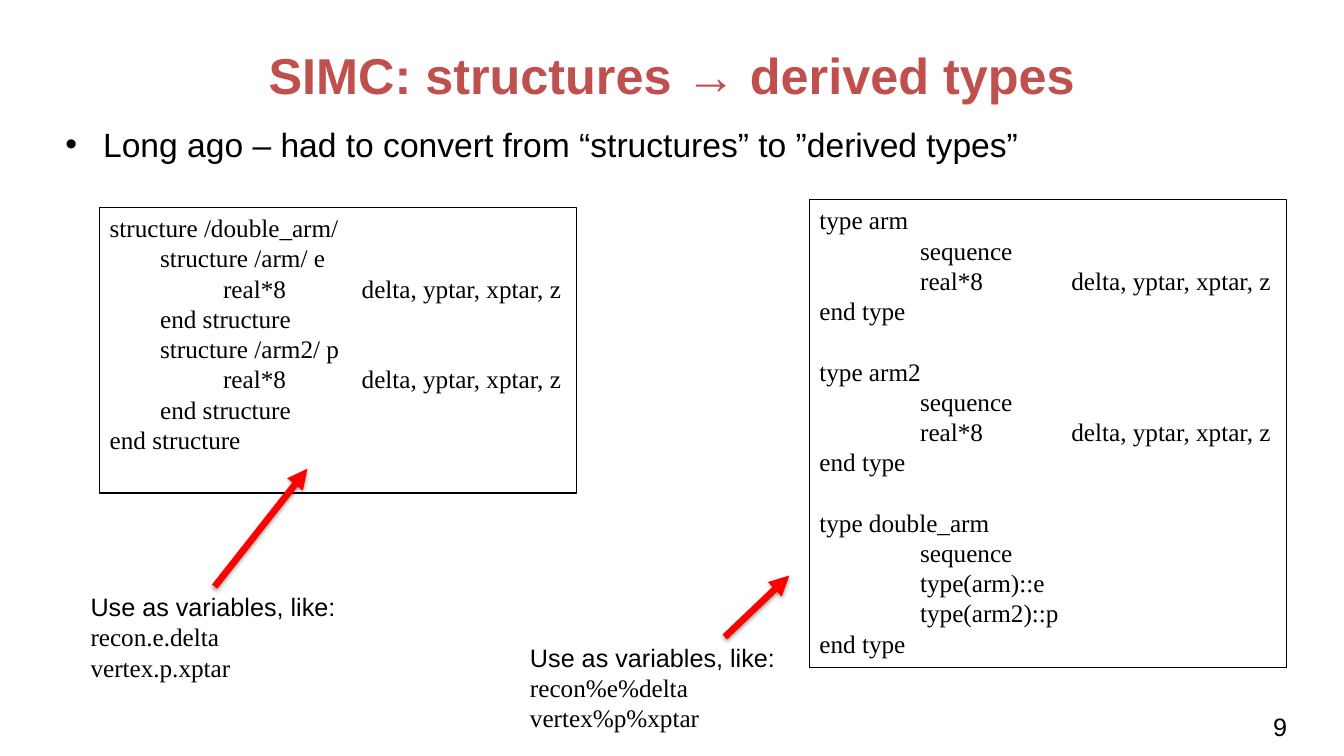
import pptx
import pptx.dml.color
import pptx.enum.shapes
import pptx.enum.text
import pptx.oxml
import pptx.oxml.ns
import pptx.util
from dataclasses import dataclass

Pt = pptx.util.Pt
ALIGN = pptx.enum.text.PP_ALIGN
ANCHOR = pptx.enum.text.MSO_ANCHOR
NAMESPACE = pptx.oxml.ns.nsdecls("a")


@dataclass(frozen=True)
class Theme:
    ink: str = "000000"
    accent: str = "C0504D"
    arrow: str = "FF0000"
    sans: str = "Arial"
    code: str = "Times New Roman"
    title_size: float = 36
    bullet_size: float = 24
    text_size: float = 18
    leading: float = 1.2
    arrow_width: float = 4.75


class SlideBuilder:
    """Holds the theme and the current slide; all lengths are in points."""

    def __init__(self, slide, theme):
        self.slide = slide
        self.theme = theme

    def style_run(self, run, size, family, color, bold=False):
        formats = {"size": Pt(size), "name": family, "bold": bold}
        for attribute, value in formats.items():
            setattr(run.font, attribute, value)
        run.font.color.rgb = pptx.dml.color.RGBColor.from_string(color)

    def set_frame(self, frame, wrap=False, anchor=ANCHOR.TOP):
        formats = {
            "word_wrap": wrap, "vertical_anchor": anchor,
            "auto_size": pptx.enum.text.MSO_AUTO_SIZE.NONE,
            "margin_left": Pt(7.2), "margin_right": Pt(7.2),
            "margin_top": Pt(3.6), "margin_bottom": Pt(3.6),
        }
        for attribute, value in formats.items():
            setattr(frame, attribute, value)

    def fill_paragraph(self, paragraph, text, size, family, gap=0):
        formats = {"alignment": ALIGN.LEFT, "space_before": Pt(gap),
                   "line_spacing": Pt(size * self.theme.leading)}
        for attribute, value in formats.items():
            setattr(paragraph, attribute, value)
        run = paragraph.add_run()
        run.text = text
        self.style_run(run, size, family, self.theme.ink)

    def next_paragraph(self, frame, first):
        return frame.paragraphs[0] if first else frame.add_paragraph()

    def title(self, text, left, top, width, height):
        title = self.slide.shapes.title
        bounds = {"left": left, "top": top, "width": width, "height": height}
        for attribute, value in bounds.items():
            setattr(title, attribute, Pt(value))
        self.set_frame(title.text_frame, wrap=True, anchor=ANCHOR.MIDDLE)
        paragraph = title.text_frame.paragraphs[0]
        paragraph.alignment = ALIGN.CENTER
        run = paragraph.add_run()
        run.text = text
        self.style_run(run, self.theme.title_size, self.theme.sans,
                       self.theme.accent, bold=True)

    def text(self, lines, left, top, width, height):
        """Text box: first line in the sans font, the others in the code font."""
        box = self.slide.shapes.add_textbox(Pt(left), Pt(top), Pt(width), Pt(height))
        self.set_frame(box.text_frame)
        for index, line in enumerate(lines):
            family = self.theme.code if index else self.theme.sans
            self.fill_paragraph(self.next_paragraph(box.text_frame, index == 0), line,
                                self.theme.text_size, family)
        return box

    def bullet(self, text, left, top, width, height, indent):
        box = self.slide.shapes.add_textbox(Pt(left), Pt(top), Pt(width), Pt(height))
        self.set_frame(box.text_frame, wrap=True)
        paragraph = box.text_frame.paragraphs[0]
        properties = paragraph._p.get_or_add_pPr()
        properties.set("marL", str(Pt(indent)))
        properties.set("indent", str(-Pt(indent)))
        for tag in (f'<a:buFont {NAMESPACE} typeface="{self.theme.sans}"/>',
                    f'<a:buChar {NAMESPACE} char="•"/>'):
            properties.append(pptx.oxml.parse_xml(tag))
        self.fill_paragraph(paragraph, text, self.theme.bullet_size, self.theme.sans)

    def code_box(self, blocks, tab_stops, left, top, width, height, border):
        """Framed listing: blocks are set one line apart."""
        box = self.slide.shapes.add_shape(
            pptx.enum.shapes.MSO_SHAPE.RECTANGLE, Pt(left), Pt(top), Pt(width), Pt(height))
        box.shadow.inherit = False
        box.fill.background()
        box.line.color.rgb = pptx.dml.color.RGBColor.from_string(self.theme.ink)
        box.line.width = Pt(border)
        self.set_frame(box.text_frame)
        stops = "".join(f'<a:tab pos="{Pt(stop)}" algn="l"/>' for stop in tab_stops)
        size = self.theme.text_size
        for block_index, block in enumerate(blocks):
            for line_index, line in enumerate(block.splitlines()):
                first = block_index == line_index == 0
                paragraph = self.next_paragraph(box.text_frame, first)
                paragraph._p.get_or_add_pPr().append(pptx.oxml.parse_xml(
                    f"<a:tabLst {NAMESPACE}>{stops}</a:tabLst>"))
                starts_block = block_index > 0 and line_index == 0
                self.fill_paragraph(paragraph, line, size, self.theme.code,
                                    gap=size * self.theme.leading if starts_block else 0)

    def arrow(self, start, end, source=None):
        line = self.slide.shapes.add_connector(
            pptx.enum.shapes.MSO_CONNECTOR.STRAIGHT, *(Pt(value) for value in start + end))
        if source is not None:
            line.begin_connect(source, 0)
        line.line.color.rgb = pptx.dml.color.RGBColor.from_string(self.theme.arrow)
        line.line.width = Pt(self.theme.arrow_width)
        line.line._get_or_add_ln().append(
            pptx.oxml.parse_xml(f'<a:tailEnd {NAMESPACE} type="triangle"/>'))
        line._element.spPr.append(pptx.oxml.parse_xml(
            f'<a:effectLst {NAMESPACE}><a:outerShdw blurRad="{Pt(3.1)}" dist="{Pt(1.6)}" '
            'dir="5400000" rotWithShape="0"><a:srgbClr val="000000">'
            '<a:alpha val="38000"/></a:srgbClr></a:outerShdw></a:effectLst>'))


STRUCTURES = """structure /double_arm/
\tstructure /arm/ e
\t\treal*8\tdelta, yptar, xptar, z
\tend structure
\tstructure /arm2/ p
\t\treal*8\tdelta, yptar, xptar, z
\tend structure
end structure"""

ARM_TYPE = """type {name}
\tsequence
\treal*8\tdelta, yptar, xptar, z
end type"""

DOUBLE_ARM_TYPE = """type double_arm
\tsequence
\ttype(arm)::e
\ttype(arm2)::p
end type"""


def main():
    deck = pptx.Presentation()
    deck.slide_width, deck.slide_height = Pt(960), Pt(540)
    builder = SlideBuilder(deck.slides.add_slide(deck.slide_layouts[5]), Theme())

    # Heading and lead
    builder.title("SIMC: structures → derived types", 48, 21.6, 864, 63.4)
    builder.bullet("Long ago – had to convert from “structures” to ”derived types”",
                   39.6, 85, 864, 41.8, indent=27)

    # Listings before and after the conversion
    builder.code_box([STRUCTURES], (36, 81, 180), 71.3, 148.3, 340.6, 203.8, border=1)
    arm_types = [ARM_TYPE.format(name=name) for name in ("arm", "arm2")]
    builder.code_box(arm_types + [DOUBLE_ARM_TYPE], (72, 180),
                     578.2, 142.6, 340.6, 334, border=0.75)

    # Usage notes with arrows to the listings
    usage = "Use as variables, like:"
    structure_usage = builder.text([usage, "recon.e.delta", "vertex.p.xptar"],
                                   57.6, 419, 191.5, 72.7)
    builder.text([usage, "recon%e%delta", "vertex%p%xptar"], 371.5, 455, 191.5, 72.7)
    builder.arrow((153.35, 419), (219.6, 334.8), source=structure_usage)
    builder.arrow((517.7, 455), (563.8, 411.1))

    # Slide number
    builder.text(["9"], 902.2, 504.7, 36.7, 28.8)

    deck.save("out.pptx")


if __name__ == "__main__":
    main()
